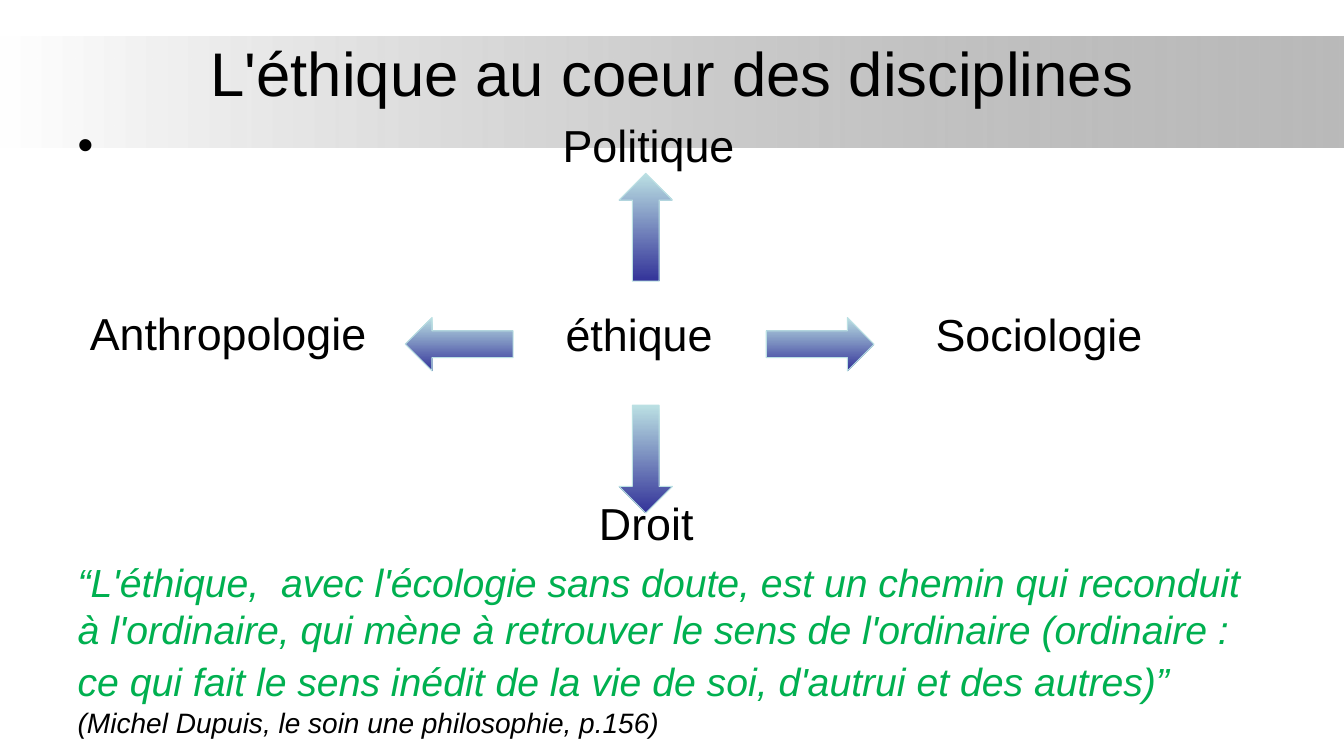
from lxml.etree import SubElement
from pptx import Presentation
from pptx.dml.color import RGBColor
from pptx.enum.shapes import MSO_SHAPE
from pptx.enum.text import MSO_ANCHOR, MSO_AUTO_SIZE, PP_ALIGN
from pptx.oxml.ns import qn
from pptx.util import Inches, Pt

BLACK = RGBColor(0x00, 0x00, 0x00)
WHITE = RGBColor(0xFF, 0xFF, 0xFF)
GRAY = RGBColor(0x80, 0x80, 0x80)
GREEN = RGBColor(0x00, 0xB0, 0x50)
PALE_BLUE = RGBColor(0xBB, 0xE0, 0xE3)
DARK_BLUE = RGBColor(0x33, 0x33, 0x99)
FONT = "Arial"

ARROW_LENGTH, ARROW_WIDTH = 1.07, 0.53
ARROWS = [
    (MSO_SHAPE.RIGHT_ARROW, 7.6, 3.15, ARROW_LENGTH, ARROW_WIDTH),
    (MSO_SHAPE.LEFT_ARROW, 4.02, 3.15, ARROW_LENGTH, ARROW_WIDTH),
    (MSO_SHAPE.UP_ARROW, 6.14, 1.72, ARROW_WIDTH, ARROW_LENGTH),
    (MSO_SHAPE.DOWN_ARROW, 6.14, 4.02, ARROW_WIDTH, ARROW_LENGTH),
]
LABELS = [("éthique", 5.61, 1.8), ("Sociologie", 9.28, 2.6)]
LABEL_TOP, LABEL_HEIGHT = 3.04, 0.52
QUOTE = (
    "“L'éthique,  avec l'écologie sans doute, est un chemin qui reconduit "
    "à l'ordinaire, qui mène à retrouver le sens de l'ordinaire (ordinaire : "
    "ce qui fait le sens inédit de la vie de soi, d'autrui et des autres)”"
)


def write(paragraph, text, size=32, color=BLACK, italic=False):
    run = paragraph.add_run()
    run.text = text
    run.font.name = FONT
    run.font.size = Pt(size)
    run.font.color.rgb = color
    run.font.italic = italic


def format_paragraph(paragraph, left=0, before=0, bullet=None):
    properties = paragraph._p.get_or_add_pPr()
    properties.set("marL", str(Inches(left)))
    properties.set("indent", str(-Inches(left) if bullet else 0))
    if bullet:
        SubElement(properties, qn("a:buChar"), char=bullet)
    else:
        SubElement(properties, qn("a:buNone"))
    paragraph.space_before = Pt(before)
    return paragraph


def place(placeholder, left, top, width, height, anchor):
    placeholder.left, placeholder.top = Inches(left), Inches(top)
    placeholder.width, placeholder.height = Inches(width), Inches(height)
    frame = placeholder.text_frame
    frame.word_wrap = True
    frame.auto_size = MSO_AUTO_SIZE.NONE
    frame.vertical_anchor = anchor
    return frame


def add_gradient_shape(slide, kind, left, top, width, height, colors, angle):
    shape = slide.shapes.add_shape(
        kind, Inches(left), Inches(top), Inches(width), Inches(height)
    )
    shape.shadow.inherit = False
    shape.fill.gradient()
    shape.fill.gradient_angle = angle
    for stop, color in zip(shape.fill.gradient_stops, colors):
        stop.color.rgb = color
    return shape


def add_band(slide):
    band = add_gradient_shape(
        slide, MSO_SHAPE.RECTANGLE, 0, 0.36, 13.33, 1.1, (WHITE, GRAY), 0
    )
    band.line.fill.background()
    end_color = list(band._element.iter(qn("a:srgbClr")))[-1]
    SubElement(end_color, qn("a:alpha"), val="54000")
    slide.shapes._spTree.insert(2, band._element)


def add_arrow(slide, kind, left, top, width, height):
    arrow = add_gradient_shape(
        slide, kind, left, top, width, height, (PALE_BLUE, DARK_BLUE), 270
    )
    arrow.line.color.rgb = PALE_BLUE
    arrow.line.width = Pt(0.75)


def add_label(slide, text, left, width):
    label = slide.shapes.add_textbox(
        Inches(left), Inches(LABEL_TOP), Inches(width), Inches(LABEL_HEIGHT)
    )
    frame = label.text_frame
    frame.word_wrap = True
    frame.margin_left = frame.margin_right = 0
    frame.margin_top = frame.margin_bottom = 0
    write(frame.paragraphs[0], text)


def fill_title(slide):
    frame = place(slide.shapes.title, 0.67, 0.3, 12, 0.82, MSO_ANCHOR.MIDDLE)
    heading = frame.paragraphs[0]
    heading.alignment = PP_ALIGN.CENTER
    write(heading, "L'éthique au coeur des disciplines", size=44)


def fill_body(slide):
    frame = place(slide.placeholders[1], 0.67, 1.12, 12, 5.58, MSO_ANCHOR.TOP)
    politics = format_paragraph(frame.paragraphs[0], left=4.81, bullet="•")
    write(politics, "Politique")

    anthropology = format_paragraph(frame.add_paragraph(), left=0.12, before=96)
    write(anthropology, "Anthropologie")

    law = format_paragraph(frame.add_paragraph(), left=5.17, before=97)
    write(law, "Droit")

    quote = format_paragraph(frame.add_paragraph(), before=6)
    write(quote, QUOTE, size=28, color=GREEN, italic=True)
    write(quote, " ", italic=True)
    write(quote, "(Michel Dupuis, le soin une philosophie, p.156)", size=20, italic=True)


def main():
    presentation = Presentation()
    presentation.slide_width = Inches(13.33)
    presentation.slide_height = Inches(7.5)
    slide = presentation.slides.add_slide(presentation.slide_layouts[1])
    add_band(slide)
    fill_title(slide)
    fill_body(slide)
    for label in LABELS:
        add_label(slide, *label)
    for arrow in ARROWS:
        add_arrow(slide, *arrow)
    presentation.save("out.pptx")


if __name__ == "__main__":
    main()
